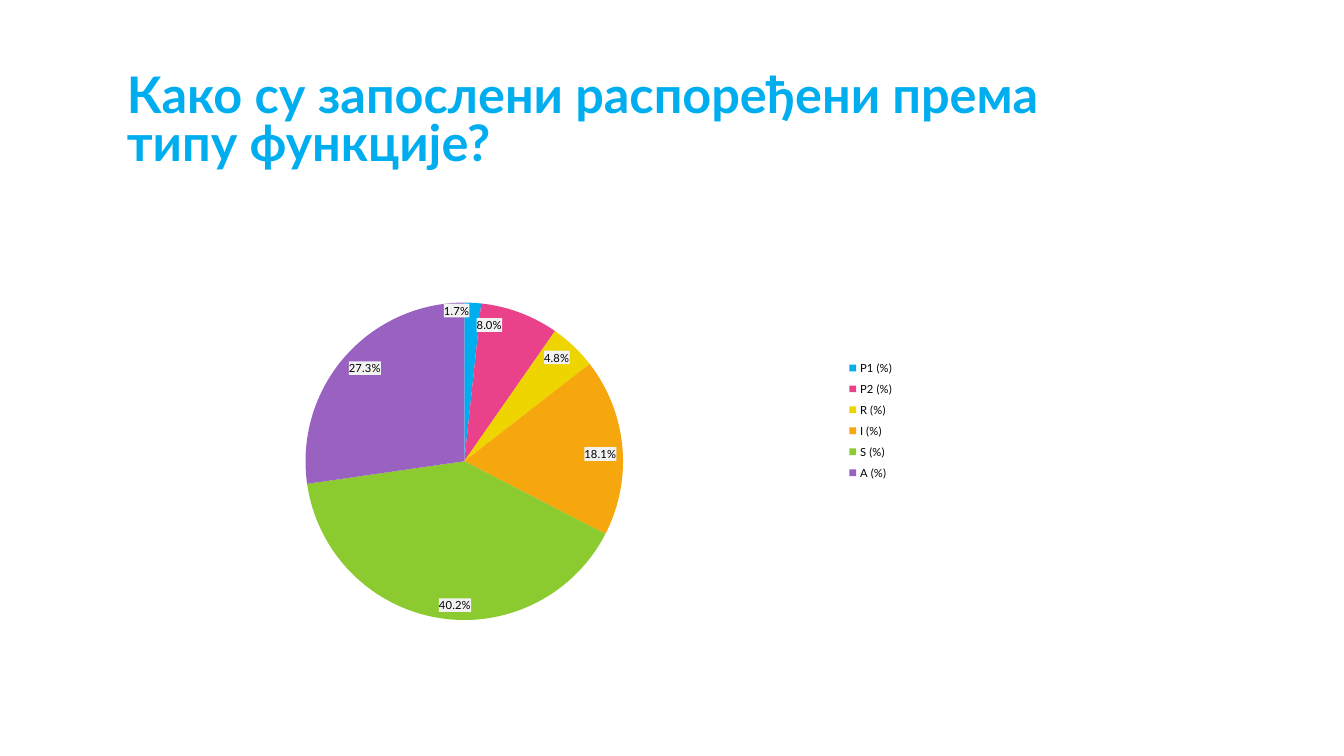
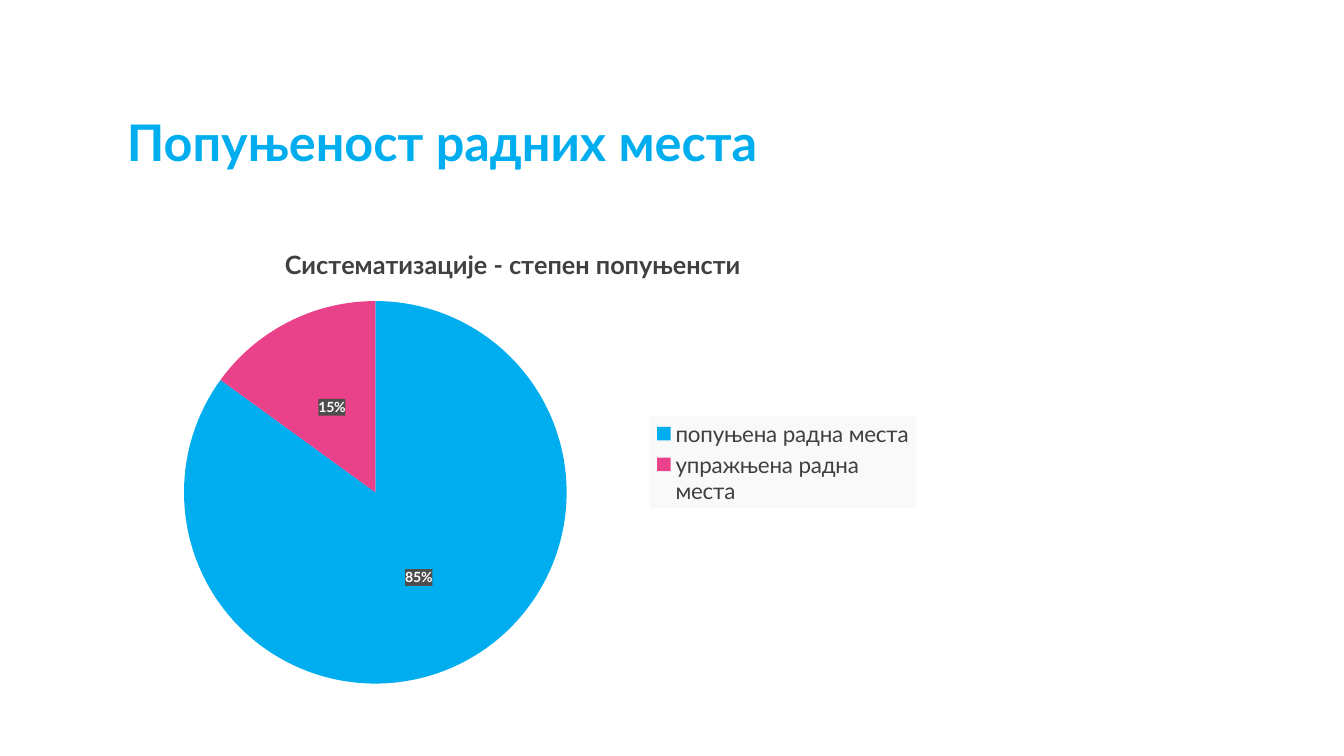
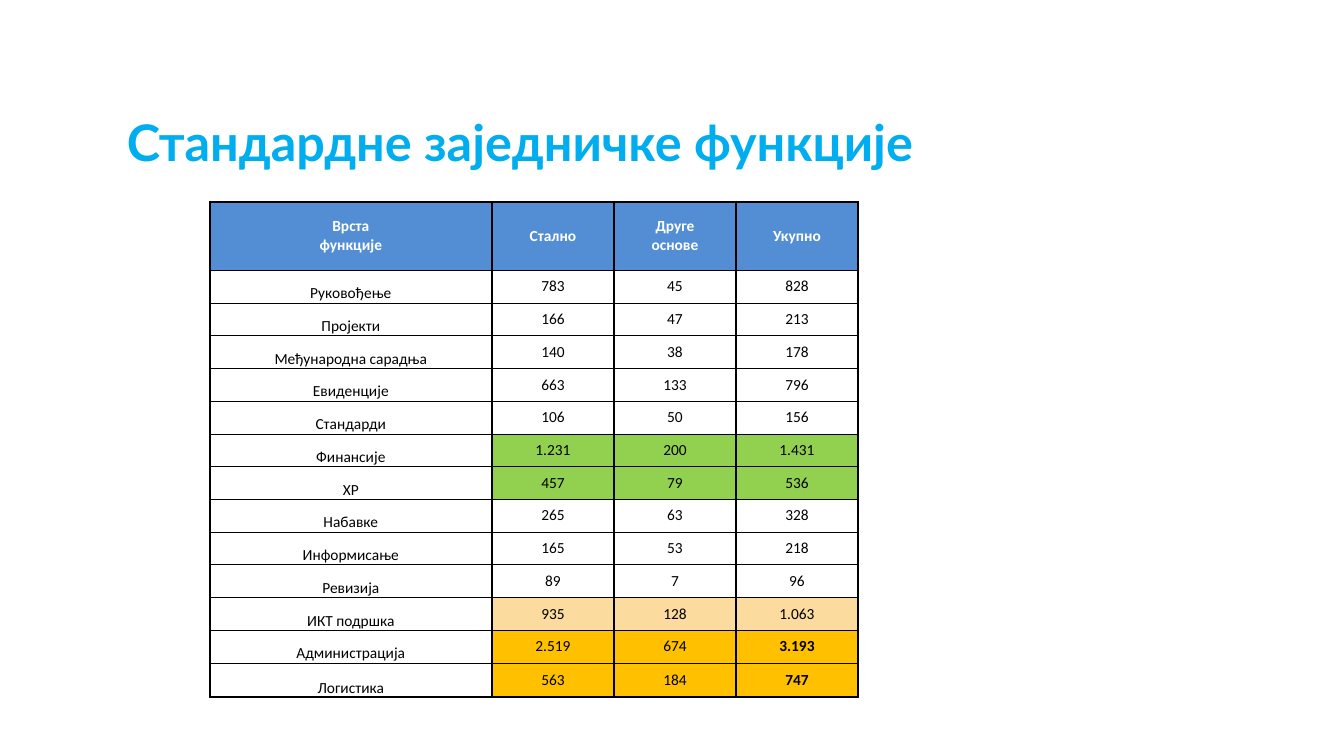
from copy import deepcopy
from dataclasses import dataclass

from lxml import etree
from pptx import Presentation
from pptx.chart.data import CategoryChartData
from pptx.dml.color import RGBColor
from pptx.enum import chart as ch, text
from pptx.oxml import ns, parse_xml
from pptx.util import Inches, Pt


@dataclass(frozen=True)
class Theme:
    font: str = "Lato"
    table_font: str = "Calibri"
    accent: str = "00AEEF"
    slices: tuple = ("00AEEF", "EA428A", "EED500", "F5A70D", "8BCB30", "9962C1")
    black: str = "000000"
    white: str = "FFFFFF"
    dark: str = "404040"
    label_light: str = "F2F2F2"
    label_dark: str = "4D4D4D"
    legend_back: str = "F9F9F9"
    header: str = "538ED5"
    green: str = "92D050"
    sand: str = "FBDC9E"
    amber: str = "FFC000"
    title_size: int = 36
    chart_title_size: int = 18
    legend_size: int = 16
    label_size: int = 10
    small_size: int = 8
    table_size: int = 11


T = Theme()

# Content
FUNCTION_TITLE = "Како су запослени распоређени према типу функције?"
FUNCTION_SHARES = [("P1 (%)", 0.017), ("P2 (%)", 0.08), ("R (%)", 0.048),
                   ("I (%)", 0.181), ("S (%)", 0.402), ("A (%)", 0.273)]
LABEL_SHIFTS = {0: (-0.02, -0.01), 1: (-0.02, 0)}

STAFFING_TITLE = "Попуњеност радних места"
STAFFING_CHART_TITLE = "Систематизације - степен попуњенсти"
STAFFING = [("попуњена радна места", 85), ("упражњена радна места", 15)]

TABLE_TITLE = "Стандардне заједничке функције"
TABLE_HEAD = ("Врста\vфункције", "Стално", "Друге\vоснове", "Укупно")
TABLE_ROWS = [
    ("Руковођење", "783", "45", "828"),
    ("Пројекти", "166", "47", "213"),
    ("Међународна сарадња", "140", "38", "178"),
    ("Евиденције", "663", "133", "796"),
    ("Стандарди", "106", "50", "156"),
    ("Финансије", "1.231", "200", "1.431"),
    ("ХР", "457", "79", "536"),
    ("Набавке", "265", "63", "328"),
    ("Информисање", "165", "53", "218"),
    ("Ревизија", "89", "7", "96"),
    ("ИКТ подршка", "935", "128", "1.063"),
    ("Администрација", "2.519", "674", "3.193"),
    ("Логистика", "563", "184", "747"),
]
ROW_FILLS = {"Финансије": T.green, "ХР": T.green, "ИКТ подршка": T.sand,
             "Администрација": T.amber, "Логистика": T.amber}
BOLD_TOTALS = ("Администрација", "Логистика")


# Shared helpers
def rgb(colour):
    return RGBColor.from_string(colour)


def style(font, size, colour, bold=False, name=T.font):
    font.name, font.size, font.bold = name, Pt(size), bold
    font.color.rgb = rgb(colour)


def add_slide(prs, title):
    s = prs.slides.add_slide(prs.slide_layouts[6])
    tf = s.shapes.add_textbox(Inches(1.16), Inches(0.58), Inches(9.5), Inches(1.17)).text_frame
    tf.word_wrap = True
    tf.vertical_anchor = text.MSO_ANCHOR.BOTTOM
    p = tf.paragraphs[0]
    p.text = title
    p.line_spacing = 0.8
    style(p.font, T.title_size, T.accent, True)
    return s


def back_fill(part, colour):
    """Put a solid fill behind a legend or data labels."""
    part.find(ns.qn("c:txPr")).addprevious(parse_xml(
        f'<c:spPr {ns.nsdecls("c", "a")}><a:solidFill><a:srgbClr val="{colour}"/>'
        '</a:solidFill></c:spPr>'))


def set_layout(part, after, **values):
    """Give a chart part a manual layout, placed after the named child."""
    old = part.find(ns.qn("c:layout"))
    if old is not None:
        part.remove(old)
    layout = etree.Element(ns.qn("c:layout"))
    manual = etree.SubElement(layout, ns.qn("c:manualLayout"))
    for tag, val in values.items():
        etree.SubElement(manual, ns.qn(f"c:{tag}")).set("val", str(val))
    if after:
        part.find(ns.qn(after)).addnext(layout)
    else:
        part.insert(0, layout)


def add_pie(s, data, box, legend_font, label_font, label_back, number_format):
    cd = CategoryChartData()
    cd.categories = [name for name, _ in data]
    cd.add_series("Series 1", [value for _, value in data])
    chart = s.shapes.add_chart(ch.XL_CHART_TYPE.PIE, *map(Inches, box), cd).chart
    style(chart.font, T.label_size, T.black)
    chart.has_title = False
    chart.has_legend = True
    chart.legend.position = ch.XL_LEGEND_POSITION.RIGHT
    chart.legend.include_in_layout = False
    style(chart.legend.font, *legend_font)
    plot = chart.plots[0]
    plot.vary_by_categories = True
    for i in range(len(data)):
        fill = plot.series[0].points[i].format.fill
        fill.solid()
        fill.fore_color.rgb = rgb(T.slices[i])
    labels = plot.series[0].data_labels
    labels.number_format = number_format
    labels.number_format_is_linked = False
    style(labels.font, *label_font)
    back_fill(labels._element, label_back)
    return chart, labels


# Slides
def function_slide(prs):
    s = add_slide(prs, FUNCTION_TITLE)
    chart, labels = add_pie(s, FUNCTION_SHARES, (1.16, 1.58, 7.83, 5.08),
                            (T.small_size, T.black), (T.small_size, T.black),
                            T.label_light, "0.0%")
    labels.show_value = True
    labels.position = ch.XL_LABEL_POSITION.INSIDE_END
    set_layout(chart._chartSpace.chart.plotArea, None, layoutTarget="inner",
               xMode="edge", yMode="edge", x=0.09, y=0.28, w=0.7, h=0.62)
    set_layout(chart.legend._element, "c:legendPos", xMode="edge", yMode="edge",
               x=0.92, y=0.38, w=0.07, h=0.26)
    # Nudge the labels of the narrow slices
    shared = [deepcopy(labels._element.find(ns.qn(t))) for t in ("c:numFmt", "c:spPr", "c:txPr")]
    for i, (dx, dy) in LABEL_SHIFTS.items():
        label = chart.plots[0].series[0].points[i].data_label
        label.position = ch.XL_LABEL_POSITION.INSIDE_END
        dLbl = labels._element.findall(ns.qn("c:dLbl"))[i]
        for part in shared:
            dLbl.find(ns.qn("c:dLblPos")).addprevious(deepcopy(part))
        set_layout(dLbl, "c:idx", x=dx, y=dy)


def staffing_slide(prs):
    s = add_slide(prs, STAFFING_TITLE)
    chart, labels = add_pie(s, STAFFING, (1, 2.25, 8.17, 4.67),
                            (T.legend_size, T.dark), (T.label_size, T.white, True),
                            T.label_dark, "0%")
    labels.show_value = False
    labels.show_percentage = True
    labels.position = ch.XL_LABEL_POSITION.CENTER
    back_fill(chart.legend._element, T.legend_back)
    chart.has_title = True
    p = chart.chart_title.text_frame.paragraphs[0]
    p.text = STAFFING_CHART_TITLE
    style(p.font, T.chart_title_size, T.dark, True)


def set_borders(cell, widths):
    tcPr = cell._tc.get_or_add_tcPr()
    for i, (side, width) in enumerate(zip(("lnL", "lnR", "lnT", "lnB"), widths)):
        tcPr.insert(i, parse_xml(
            f'<a:{side} {ns.nsdecls("a")} w="{Pt(width)}"><a:solidFill>'
            f'<a:srgbClr val="{T.black}"/></a:solidFill></a:{side}>'))


def table_slide(prs):
    s = add_slide(prs, TABLE_TITLE)
    rows = [TABLE_HEAD] + TABLE_ROWS
    last_row, last_col = len(rows) - 1, len(TABLE_HEAD) - 1
    height, head_height, foot_height = Inches(4.92), Inches(0.68), Inches(0.34)
    body_height = (height - head_height - foot_height) // (last_row - 1)
    table = s.shapes.add_table(len(rows), len(TABLE_HEAD), Inches(2.08), Inches(2),
                               Inches(6.43), height).table
    table.first_row = table.horz_banding = False
    for c, col in enumerate(table.columns):
        col.width = Inches(1.21 if c else 2.8)
    for r, values in enumerate(rows):
        table.rows[r].height = {0: head_height, last_row: foot_height}.get(r, body_height)
        for c, value in enumerate(values):
            cell = table.cell(r, c)
            cell.margin_left = cell.margin_right = cell.margin_top = cell.margin_bottom = 0
            name_cell = r > 0 and c == 0
            cell.vertical_anchor = text.MSO_ANCHOR.BOTTOM if name_cell else text.MSO_ANCHOR.MIDDLE
            p = cell.text_frame.paragraphs[0]
            p.text = value
            p.alignment = text.PP_ALIGN.CENTER
            bold = r == 0 or (c == last_col and values[0] in BOLD_TOTALS)
            style(p.font, T.table_size, T.black if r else T.white, bold, T.table_font)
            colour = T.header if r == 0 else ROW_FILLS.get(values[0]) if c else None
            if colour:
                cell.fill.solid()
                cell.fill.fore_color.rgb = rgb(colour)
            else:
                cell.fill.background()
            set_borders(cell, (1 if c else 1.5, 1.5 if c == last_col else 1,
                               {0: 1.5, 1: 1}.get(r, 0.5),
                               {0: 1, last_row: 1.5}.get(r, 0.5)))


def main():
    prs = Presentation()
    prs.slide_width, prs.slide_height = Inches(13.33), Inches(7.5)
    function_slide(prs)
    staffing_slide(prs)
    table_slide(prs)
    prs.save("out.pptx")


if __name__ == "__main__":
    main()
